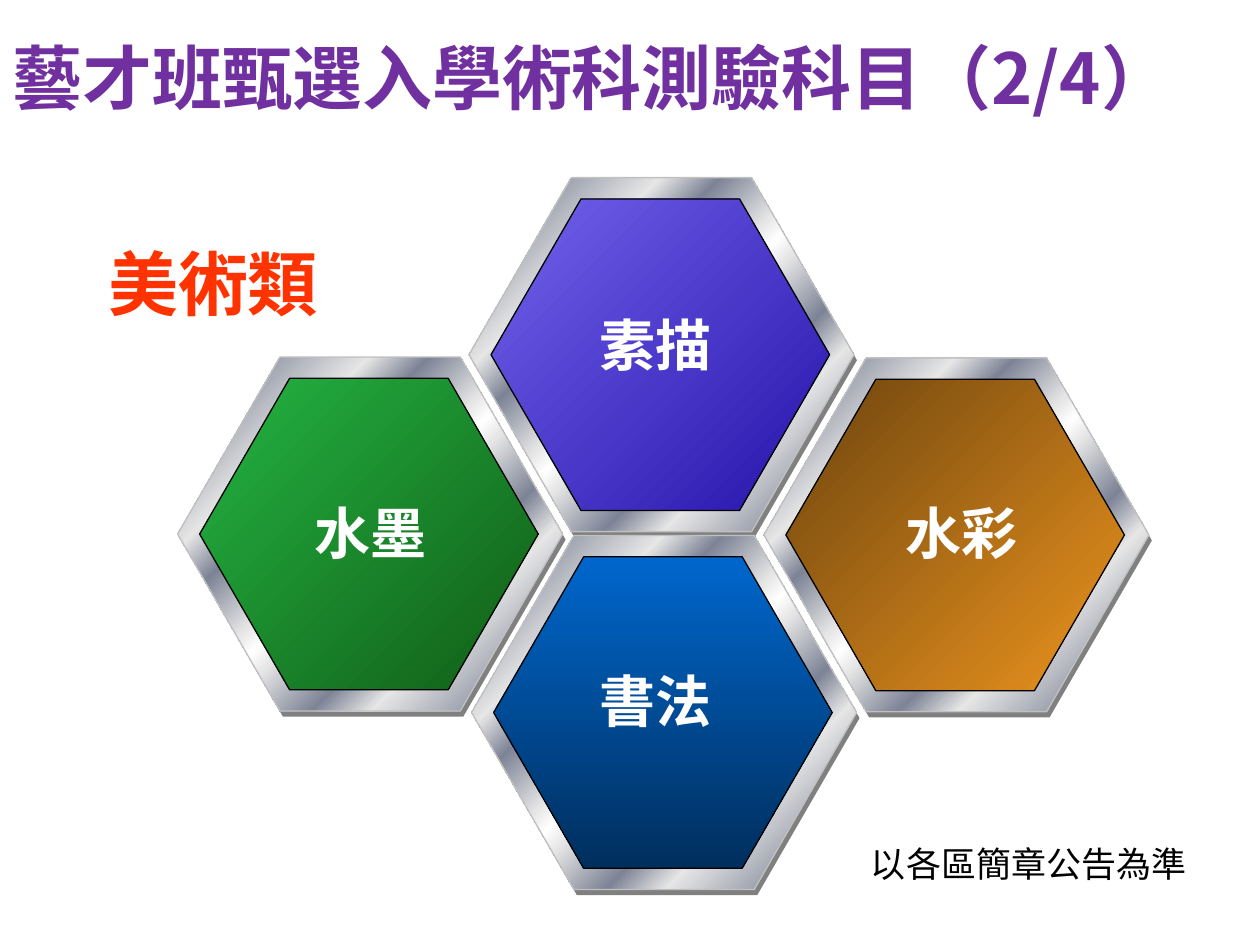
from dataclasses import dataclass
from lxml.etree import SubElement
from pptx import Presentation
from pptx.dml.color import RGBColor
from pptx.enum.shapes import MSO_SHAPE
from pptx.enum.text import MSO_ANCHOR, MSO_AUTO_SIZE, PP_ALIGN
from pptx.oxml.ns import qn
from pptx.util import Pt


@dataclass(frozen=True)
class Theme:
    font: str = "Noto Sans CJK SC"
    title: str = "7030A0"
    group: str = "FF3300"
    label: str = "FFFFFF"
    note: str = "000000"
    shade: str = "808080"
    rim: str = "C0C0C0"
    edge: str = "000000"
    big: int = 40
    mid: int = 32
    small: int = 20
    steel: tuple = (
        (0, "E6E6E6"), (8, "7D8496"), (26, "E6E6E6"), (34, "7D8496"),
        (46, "E6E6E6"), (50, "FFFFFF"), (54, "E6E6E6"), (66, "7D8496"),
        (74, "E6E6E6"), (92, "7D8496"), (100, "E6E6E6"),
    )


THEME = Theme()
RING = (220, 202.3)
CORE = (193.5, 178)
LABEL = (108, 62.6)
CELLS = (
    ("素描", (268, 101.5), (320.5, 174), ("7262EC", "2614AA"), 45),
    ("水墨", (101.5, 204), (157.5, 281.5), ("24B443", "115D16"), 45),
    ("水彩", (436.5, 204.5), (495.5, 281.5), ("6D440E", "EC941E"), 45),
    ("書法", (269.5, 306), (320.5, 377.5), ("0066CC", "002F5E"), 90),
)


def color(code):
    return RGBColor.from_string(code)


def write(frame, text, size, code, bold=True, align=PP_ALIGN.CENTER):
    para = frame.paragraphs[0]
    para.text = text
    para.alignment = align
    font = para.font
    font.name = THEME.font
    font.size = Pt(size)
    font.bold = bold
    font.color.rgb = color(code)
    props = para._p.pPr.find(qn("a:defRPr"))
    SubElement(props, qn("a:ea"), typeface=THEME.font)


def add_text(slide, spot, size, text, points, code, bold=True):
    box = slide.shapes.add_textbox(*map(Pt, spot + size))
    frame = box.text_frame
    frame.word_wrap = False
    frame.auto_size = MSO_AUTO_SIZE.SHAPE_TO_FIT_TEXT
    write(frame, text, points, code, bold)


def add_hex(slide, spot, size):
    shape = slide.shapes.add_shape(MSO_SHAPE.HEXAGON, *map(Pt, spot + size))
    shape.adjustments[0] = 0.289
    shape.shadow.inherit = False
    return shape


def blend(shape, stops, angle):
    shape.fill.gradient()
    shape.fill.gradient_angle = 360 - angle
    ramp = shape._element.spPr.find(qn("a:gradFill")).find(qn("a:gsLst"))
    for stop in list(ramp):
        ramp.remove(stop)
    for place, code in stops:
        stop = SubElement(ramp, qn("a:gs"), pos=str(place * 1000))
        SubElement(stop, qn("a:srgbClr"), val=code)


def outline(shape, code):
    shape.line.color.rgb = color(code)
    shape.line.width = Pt(0.75)


def add_cell(slide, spot, tones, angle):
    left, top = spot
    shade = add_hex(slide, (left + 1.7, top + 3.2), RING)
    shade.fill.solid()
    shade.fill.fore_color.rgb = color(THEME.shade)
    shade.line.fill.background()
    ring = add_hex(slide, spot, RING)
    blend(ring, THEME.steel, 45)
    outline(ring, THEME.rim)
    core = add_hex(slide, (left + 12.6, top + 12.2), CORE)
    blend(core, zip((0, 100), tones), angle)
    outline(core, THEME.edge)


def set_title(slide, text):
    title = slide.shapes.title
    title.left, title.top, title.width, title.height = map(Pt, (0, 1.5, 720, 84))
    frame = title.text_frame
    frame.auto_size = MSO_AUTO_SIZE.NONE
    frame.vertical_anchor = MSO_ANCHOR.MIDDLE
    write(frame, text, THEME.big, THEME.title, align=PP_ALIGN.LEFT)


def main():
    deck = Presentation()
    deck.slide_width, deck.slide_height = Pt(720), Pt(540)
    slide = deck.slides.add_slide(deck.slide_layouts[5])
    set_title(slide, "藝才班甄選入學術科測驗科目（2/4）")
    add_text(slide, (54, 134), (135.4, 55.4), "美術類", THEME.big, THEME.group)
    for text, spot, place, tones, angle in CELLS:
        add_cell(slide, spot, tones, angle)
        add_text(slide, place, LABEL, text, THEME.mid, THEME.label)
    add_text(slide, (489.6, 478), (196.6, 31.7), "以各區簡章公告為準",
             THEME.small, THEME.note, bold=False)
    deck.save("out.pptx")


if __name__ == "__main__":
    main()
